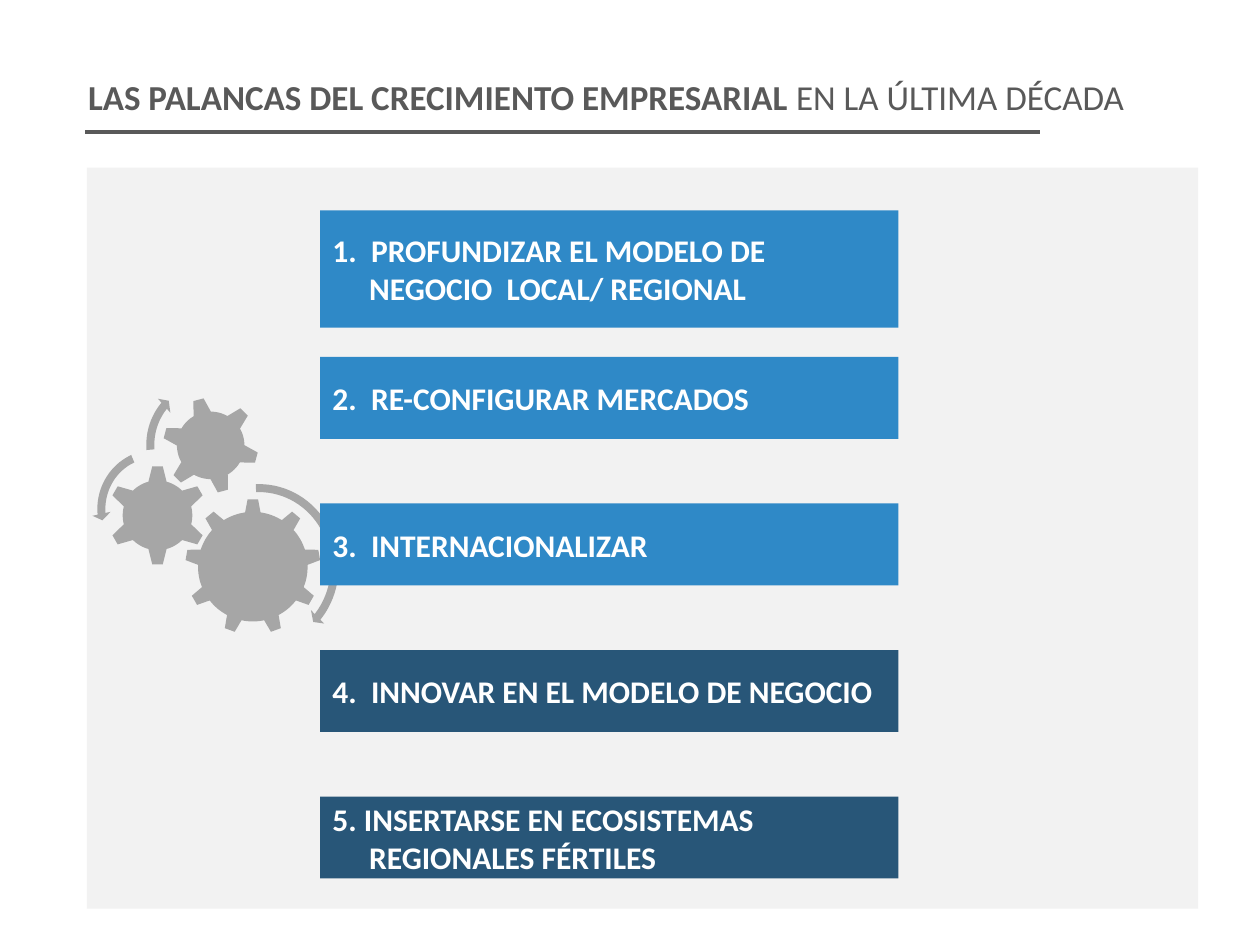
"""Build the slide on the levers of business growth."""
from math import atan2, cos, hypot, pi, radians, sin

from lxml.etree import SubElement
from pptx import Presentation
from pptx.dml.color import RGBColor
from pptx.enum.shapes import MSO_CONNECTOR, MSO_SHAPE as SHAPE
from pptx.enum.text import MSO_ANCHOR as ANCHOR, PP_ALIGN as ALIGN
from pptx.oxml.ns import qn
from pptx.util import Pt

COLORS = {
    "text": "595959", "panel": "F2F2F2", "gear": "A6A6A6",
    "light": "2F89C7", "dark": "285678", "white": "FFFFFF",
}
TITLE = [("LAS PALANCAS DEL CRECIMIENTO EMPRESARIAL", True), (" EN LA ÚLTIMA DÉCADA", False)]
LEVERS = [
    ("1.  PROFUNDIZAR EL MODELO DE NEGOCIO  LOCAL/ REGIONAL", "light", 67),
    ("2.  RE-CONFIGURAR MERCADOS", "light", 46.8),
    ("3.  INTERNACIONALIZAR", "light", 46.8),
    ("4.  INNOVAR EN EL MODELO DE NEGOCIO", "dark", 46.8),
    ("5. INSERTARSE EN ECOSISTEMAS REGIONALES FÉRTILES", "dark", 46.8),
]
LEVER_LEFT, LEVER_TOP, LEVER_WIDTH, LEVER_PITCH = 182.9, 120.2, 330.5, 83.75
GEARS = [
    {"center": (144.5, 323.8), "teeth": 9, "turn": -90, "body": 31, "tip": 38.5, "base_half": 4.4},
    {"center": (90, 294.5), "teeth": 6, "turn": -90, "body": 19.2, "tip": 28, "base_half": 5.2},
    {"center": (120.4, 254.5), "teeth": 6, "turn": -45, "body": 18.6, "tip": 27, "base_half": 5.1},
]
TIP_HALF = 3
ARC_STEPS = 8
ARROWS = [
    (SHAPE.CIRCULAR_ARROW, (99.4, 273.6, 97.2, 100.8), (0.047, 2.99, 24.277, 160.67, 0.055)),
    (SHAPE.LEFT_CIRCULAR_ARROW, (52.6, 254.2, 70.6, 73.4), (0.065, 4.3, 104.891, 148.378, 0.075)),
    (SHAPE.CIRCULAR_ARROW, (80.6, 214.6, 76.3, 79.2), (0.06, 3.941, 133.138, 105.082, 0.07)),
]


def color(name):
    return RGBColor.from_string(COLORS[name])


def paint(shape, fill):
    shape.shadow.inherit = False
    shape.fill.solid()
    shape.fill.fore_color.rgb = color(fill)
    shape.line.fill.background()
    return shape


def add_preset(page, preset, frame, fill):
    return paint(page.shapes.add_shape(preset, *map(Pt, frame)), fill)


def add_span(para, text, size=18, bold=True, fill="white"):
    span = para.add_run()
    span.text = text
    span.font.name = "Calibri"
    span.font.size = Pt(size)
    span.font.bold = bold
    span.font.color.rgb = color(fill)


def add_gear(page, center, teeth, turn, body, tip, base_half):
    step = 2 * pi / teeth
    radius, half_angle = hypot(body, base_half), atan2(base_half, body)
    points = []

    def place(angle, out, side=0):
        x = center[0] + out * cos(angle) - side * sin(angle)
        y = center[1] + out * sin(angle) + side * cos(angle)
        points.append((Pt(x), Pt(y)))

    for tooth in range(teeth):
        angle = radians(turn) + tooth * step
        place(angle, body, -base_half)
        place(angle, tip, -TIP_HALF)
        place(angle, tip, TIP_HALF)
        for part in range(ARC_STEPS):
            place(angle + half_angle + (step - 2 * half_angle) * part / ARC_STEPS, radius)
    builder = page.shapes.build_freeform(*points[0])
    builder.add_line_segments(points[1:], close=True)
    paint(builder.convert_to_shape(), "gear")


def add_lever(page, text, fill, top, height):
    box = add_preset(page, SHAPE.RECTANGLE, (LEVER_LEFT, top, LEVER_WIDTH, height), fill)
    frame = box.text_frame
    frame.word_wrap = True
    frame.vertical_anchor = ANCHOR.MIDDLE
    para = frame.paragraphs[0]
    para.alignment = ALIGN.LEFT
    properties = para._p.get_or_add_pPr()
    properties.set("marL", str(Pt(21)))
    properties.set("indent", str(-Pt(21)))
    add_span(para, text)


def main():
    deck = Presentation()
    deck.slide_width, deck.slide_height = Pt(720), Pt(540)
    page = deck.slides.add_slide(deck.slide_layouts[6])

    rule = page.shapes.add_connector(MSO_CONNECTOR.STRAIGHT, Pt(594), Pt(75.6), Pt(48.5), Pt(75.6))
    rule.line.color.rgb = color("text")
    rule.line.width = Pt(2)
    SubElement(rule._element.spPr, qn("a:effectLst"))

    add_preset(page, SHAPE.RECTANGLE, (49.7, 95.8, 635, 423.4), "panel")
    title = page.shapes.add_textbox(Pt(43.2), Pt(39.6), Pt(641.5), Pt(50.4)).text_frame
    title.word_wrap = True
    for text, bold in TITLE:
        add_span(title.paragraphs[0], text, size=20, bold=bold, fill="text")

    for gear in GEARS:
        add_gear(page, **gear)
    for preset, frame, values in ARROWS:
        arrow = add_preset(page, preset, frame, "gear")
        for index, value in enumerate(values):
            arrow.adjustments[index] = value
    for index, (text, fill, height) in enumerate(LEVERS):
        add_lever(page, text, fill, LEVER_TOP + index * LEVER_PITCH, height)

    deck.save("out.pptx")


if __name__ == "__main__":
    main()
